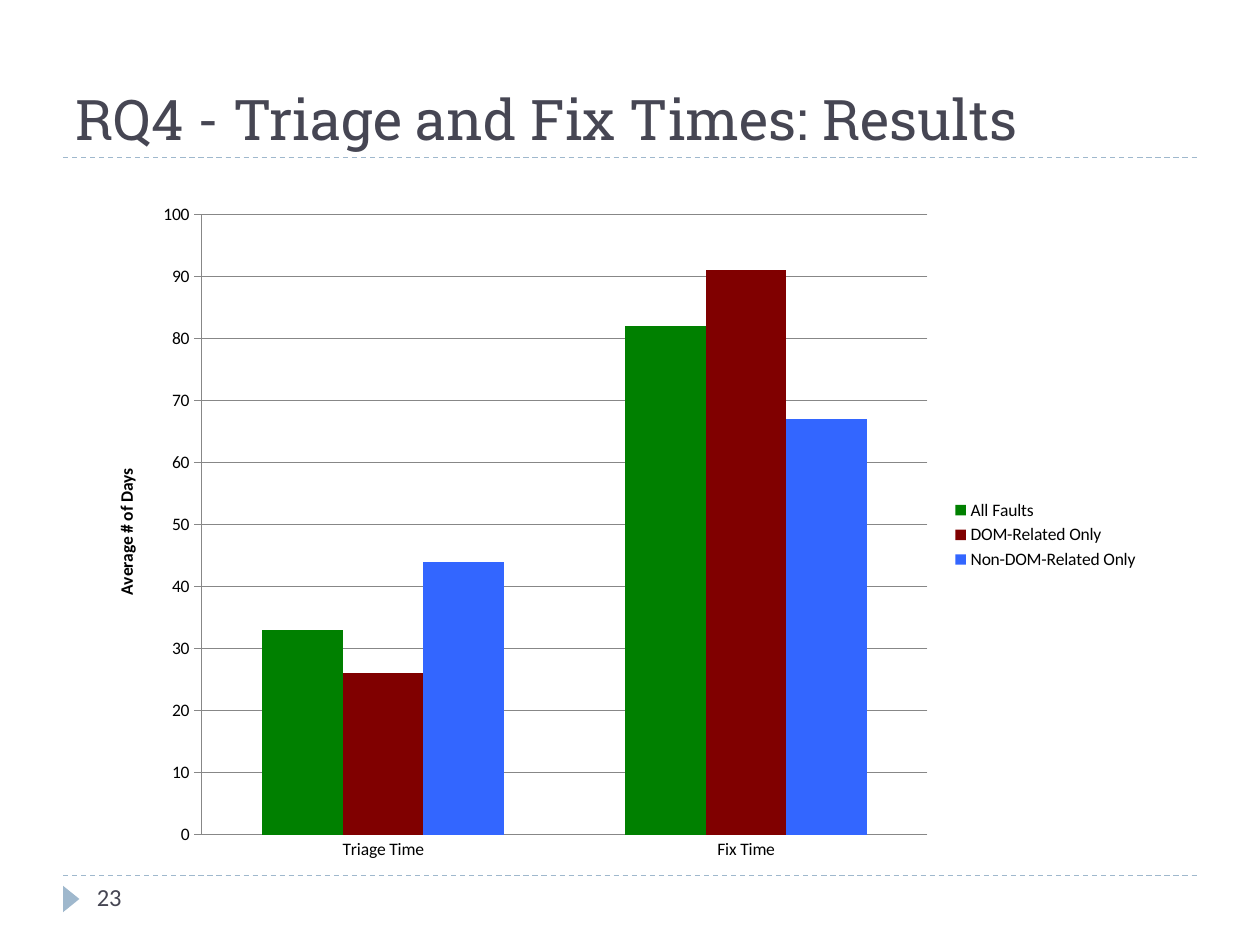
from dataclasses import dataclass

from lxml import etree
from pptx import Presentation
from pptx.chart.data import CategoryChartData
from pptx.dml.color import RGBColor
from pptx.enum.chart import XL_CHART_TYPE, XL_LEGEND_POSITION, XL_TICK_MARK
from pptx.enum.dml import MSO_LINE
from pptx.enum.shapes import MSO_CONNECTOR, MSO_SHAPE
from pptx.enum.text import MSO_ANCHOR
from pptx.oxml import parse_xml
from pptx.oxml.ns import nsdecls, qn
from pptx.util import Inches, Pt

COLUMNS = XL_CHART_TYPE.COLUMN_CLUSTERED
LEGEND_RIGHT = XL_LEGEND_POSITION.RIGHT
TICK_NONE, TICK_OUT = XL_TICK_MARK.NONE, XL_TICK_MARK.OUTSIDE
TOP, BOTTOM = MSO_ANCHOR.TOP, MSO_ANCHOR.BOTTOM


@dataclass(frozen=True)
class Theme:
    heading_font: str = "Roboto Slab"
    body_font: str = "Calibri"
    title_size: int = 32
    number_size: int = 14
    chart_size: int = 10
    ink: RGBColor = RGBColor(0x46, 0x46, 0x53)
    accent: RGBColor = RGBColor(0x9F, 0xB8, 0xCD)
    black: RGBColor = RGBColor(0, 0, 0)
    grid: RGBColor = RGBColor(0x87, 0x87, 0x87)
    green: RGBColor = RGBColor(0, 0x80, 0)
    maroon: RGBColor = RGBColor(0x80, 0, 0)
    blue: RGBColor = RGBColor(0x33, 0x66, 0xFF)


theme = Theme()


def add_text(slide, text, left, top, width, height, font, size, anchor):
    box = slide.shapes.add_textbox(
        Inches(left), Inches(top), Inches(width), Inches(height))
    tf = box.text_frame
    tf.word_wrap = True
    tf.vertical_anchor = anchor
    tf.text = text
    r = tf.paragraphs[0].runs[0]
    r.font.name = font
    r.font.size = Pt(size)
    r.font.color.rgb = theme.ink


prs = Presentation()
prs.slide_width, prs.slide_height = Inches(10), Inches(7.5)
s = prs.slides.add_slide(prs.slide_layouts[6])

# Dashed rules under the title and above the footer
for y in (6.95, 1.25):
    rule = s.shapes.add_connector(
        MSO_CONNECTOR.STRAIGHT, Inches(0.5), Inches(y), Inches(9.5), Inches(y))
    rule.line.color.rgb = theme.accent
    rule.line.width = Pt(0.75)
    rule.line.dash_style = MSO_LINE.DASH
    etree.SubElement(rule._element.spPr, qn("a:effectLst"))

# Footer marker
marker = s.shapes.add_shape(
    MSO_SHAPE.ISOSCELES_TRIANGLE,
    Inches(0.46), Inches(7.07), Inches(0.21), Inches(0.13))
marker.rotation = 90
marker.shadow.inherit = False
marker.fill.solid()
marker.fill.fore_color.rgb = theme.accent
marker.line.fill.background()

add_text(s, "RQ4 - Triage and Fix Times: Results", 0.5, 0.17, 9, 1.08,
         theme.heading_font, theme.title_size, BOTTOM)
add_text(s, "23", 0.67, 6.95, 2.17, 0.4,
         theme.body_font, theme.number_size, TOP)

# Chart of average days by fault type
series_specs = (
    ("All Faults", (33, 82), theme.green),
    ("DOM-Related Only", (26, 91), theme.maroon),
    ("Non-DOM-Related Only", (44, 67), theme.blue),
)
data = CategoryChartData()
data.categories = ("Triage Time", "Fix Time")
for name, values, color in series_specs:
    data.add_series(name, values)
chart = s.shapes.add_chart(
    COLUMNS, Inches(0.67), Inches(1.54), Inches(8.47), Inches(5.41), data).chart
chart.font.name = theme.body_font
chart.font.size = Pt(theme.chart_size)
chart.font.color.rgb = theme.black
chart.has_title = False
chart.has_legend = True
chart.legend.position = LEGEND_RIGHT
chart.legend.include_in_layout = False

plot = chart.plots[0]
plot.gap_width = 150
plot.overlap = 0
plot.vary_by_categories = False
for series, (name, values, color) in zip(plot.series, series_specs):
    series.format.fill.solid()
    series.format.fill.fore_color.rgb = color

days = chart.value_axis
days.minimum_scale, days.maximum_scale, days.major_unit = 0, 100, 10
days.has_major_gridlines = True
days.major_tick_mark = TICK_OUT
chart.category_axis.major_tick_mark = TICK_NONE
for line in (days.format.line, days.major_gridlines.format.line,
             chart.category_axis.format.line):
    line.color.rgb = theme.grid
    line.width = Pt(0.75)

tf = days.axis_title.text_frame
tf.text = "Average # of Days"
r = tf.paragraphs[0].runs[0]
r.font.name = theme.body_font
r.font.size = Pt(theme.chart_size)
r.font.bold = True
r.font.color.rgb = theme.black

# Fixed inner plot area, as fractions of the chart
plot_area = chart._chartSpace.chart.plotArea
for old in plot_area.findall(qn("c:layout")):
    plot_area.remove(old)
bounds = "".join(f'<c:{tag} val="{value}"/>' for tag, value in (
    ("layoutTarget", "inner"), ("xMode", "edge"), ("yMode", "edge"),
    ("x", 0.11), ("y", 0.03), ("w", 0.68), ("h", 0.91)))
plot_area.insert(0, parse_xml(
    f'<c:layout {nsdecls("c")}><c:manualLayout>{bounds}</c:manualLayout></c:layout>'))

prs.save("out.pptx")
